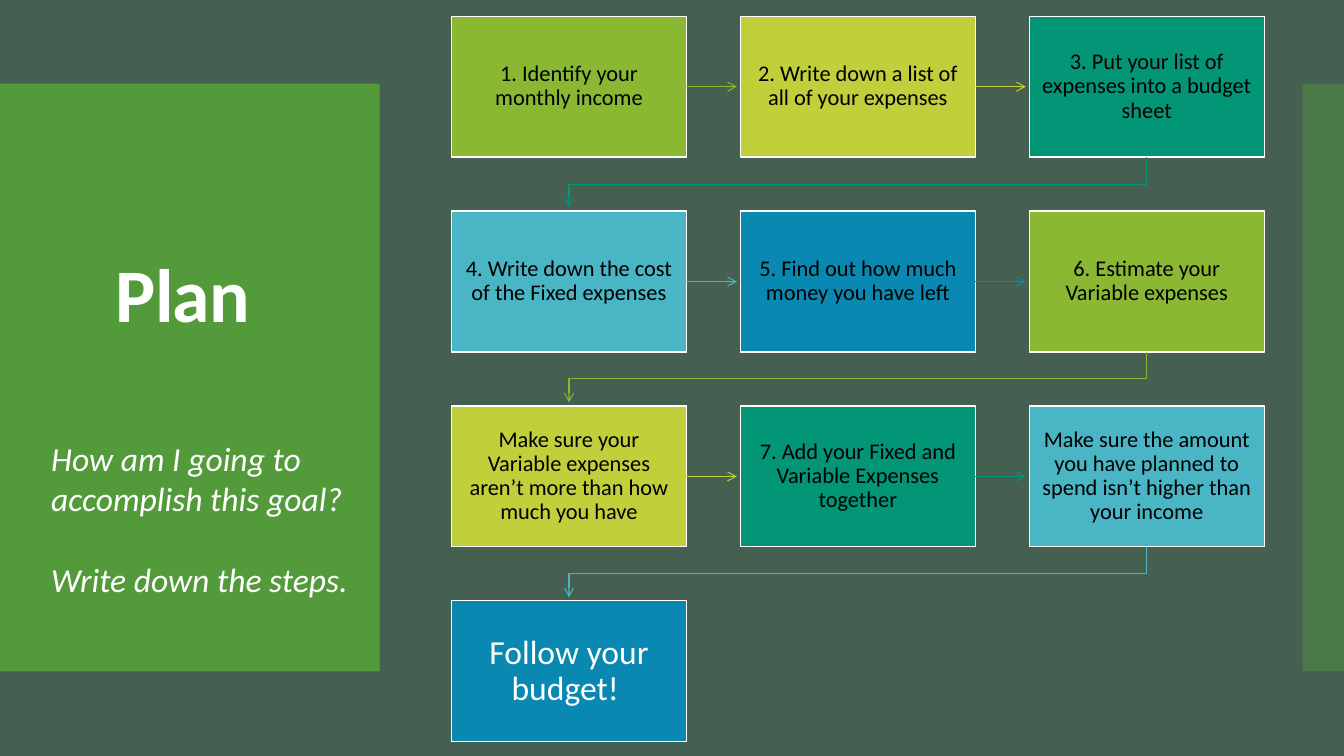
from lxml import etree
from pptx import Presentation
from pptx.dml.color import RGBColor
from pptx.enum import shapes, text
from pptx.oxml import ns
from pptx.util import Cm, Pt

WHITE, BLACK, GREEN = "FFFFFF", "000000", "549E39"
STEP_COLORS = ["8AB833", "C0CF3A", "029676", "4AB5C4", "0989B1"]
STEPS = [
    "1. Identify your monthly income",
    "2. Write down a list of all of your expenses",
    "3. Put your list of expenses into a budget sheet",
    "4. Write down the cost of the Fixed expenses",
    "5. Find out how much money you have left",
    "6. Estimate your Variable expenses",
    "Make sure your Variable expenses aren’t more than how much you have",
    "7. Add your Fixed and Variable Expenses together",
    "Make sure the amount you have planned to spend isn’t higher than your income",
    "Follow your budget! ",
]
COLUMNS = 3
LEFT, TOP = Cm(11.38), Cm(0.41)
WIDTH, HEIGHT = Cm(5.92), Cm(3.55)
PITCH_X, PITCH_Y = Cm(7.28), Cm(4.91)
ARROW = Cm(1.27)


def paint(target, color):
    """Give a fill a solid colour."""
    target.solid()
    target.fore_color.rgb = RGBColor.from_string(color)


def add_child(parent, tag, **attributes):
    """Append a drawing element with the given attributes."""
    return etree.SubElement(parent, ns.qn(tag), **attributes)


def add_rectangle(page, left, top, width, height, color):
    """Draw a plain filled rectangle."""
    box = page.shapes.add_shape(shapes.MSO_SHAPE.RECTANGLE, left, top, width, height)
    box.shadow.inherit = False
    paint(box.fill, color)
    box.line.fill.background()
    return box


def add_panel(page, left, width, opacity):
    """Draw a translucent green side panel."""
    panel = add_rectangle(page, left, Cm(2.11), width, Cm(14.81), GREEN)
    color = panel.fill._xPr.find(ns.qn("a:solidFill"))[0]
    add_child(color, "a:alpha", val=str(opacity * 1000))


def style_text(frame, size, color, align, inset=0.25, bold=False, italic=False, spacing=None):
    """Format all paragraphs and runs of a text frame."""
    frame.word_wrap = True
    frame.margin_left = frame.margin_right = Cm(inset)
    frame.margin_top = frame.margin_bottom = Cm(inset / 2)
    for para in frame.paragraphs:
        para.alignment = align
        para.line_spacing = spacing
        for span in para.runs:
            font = span.font
            font.name, font.size = "Calibri", Pt(size)
            font.bold, font.italic = bold, italic
            font.color.rgb = RGBColor.from_string(color)


def add_title(page):
    """Write the slide title."""
    box = page.shapes.add_textbox(Cm(0.72), Cm(3.12), Cm(8.18), Cm(8.76))
    frame = box.text_frame
    frame.text = "Plan "
    frame.vertical_anchor = text.MSO_ANCHOR.MIDDLE
    style_text(frame, 54, WHITE, text.PP_ALIGN.CENTER, bold=True, spacing=0.9)
    frame.paragraphs[0].runs[0].font._element.set("spc", "-60")


def add_prompt(page):
    """Write the question and the instruction under the title."""
    box = page.shapes.add_textbox(Cm(1.04), Cm(10.9), Cm(8.18), Cm(4.37))
    frame = box.text_frame
    frame.text = "How am I going to accomplish this goal?\nWrite down the steps."
    style_text(frame, 24, WHITE, text.PP_ALIGN.LEFT, italic=True)
    frame.paragraphs[1].space_before = Pt(29)


def add_step(page, index, wording, color, size, ink):
    """Place one step box in the grid."""
    row, column = divmod(index, COLUMNS)
    box = add_rectangle(page, LEFT + column * PITCH_X, TOP + row * PITCH_Y,
                        WIDTH, HEIGHT, color)
    paint(box.line.fill, WHITE)
    box.line.width = Pt(0.85)
    box.text_frame.text = wording
    box.text_frame.vertical_anchor = text.MSO_ANCHOR.MIDDLE
    style_text(box.text_frame, size, ink, text.PP_ALIGN.CENTER,
               inset=size * 0.02, spacing=0.9)
    return box


def style_arrow(arrow, color):
    """Give a line its colour, weight and open arrowhead."""
    paint(arrow.line.fill, color)
    arrow.line.width = Pt(0.75)
    add_child(arrow.line._get_or_add_ln(), "a:tailEnd", type="arrow")


def add_straight_arrow(page, box, color):
    """Point from a box to its right-hand neighbour."""
    right, middle = box.left + box.width, box.top + box.height // 2
    arrow = page.shapes.add_connector(shapes.MSO_CONNECTOR.STRAIGHT,
                                      right, middle, right + ARROW, middle)
    arrow.begin_connect(box, 3)
    style_arrow(arrow, color)
    add_child(arrow._element.spPr, "a:effectLst")


def add_return_arrow(page, box, color):
    """Lead from the end of a row to the start of the next."""
    start, end = box.left + box.width // 2, LEFT + WIDTH // 2
    bottom = box.top + box.height
    bend = bottom + (PITCH_Y - HEIGHT) // 2
    builder = page.shapes.build_freeform(start, bottom)
    builder.add_line_segments([(start, bend), (end, bend), (end, bottom + ARROW)], close=False)
    arrow = builder.convert_to_shape()
    arrow.shadow.inherit = False
    arrow.fill.background()
    style_arrow(arrow, color)


def add_flow(page):
    """Draw all steps and the arrows between them."""
    last = len(STEPS) - 1
    for index, wording in enumerate(STEPS):
        color = STEP_COLORS[index % len(STEP_COLORS)]
        size, ink = (24, WHITE) if index == last else (16, BLACK)
        box = add_step(page, index, wording, color, size, ink)
        if index == last:
            continue
        if index % COLUMNS == COLUMNS - 1:
            add_return_arrow(page, box, color)
        else:
            add_straight_arrow(page, box, color)


def main():
    """Build and save the slide."""
    deck = Presentation()
    deck.slide_width, deck.slide_height = Cm(33.87), Cm(19.05)
    page = deck.slides.add_slide(deck.slide_layouts[6])
    paint(page.background.fill, "455F51")
    add_panel(page, Cm(0), Cm(9.57), 95)
    add_panel(page, Cm(32.82), Cm(1.05), 40)
    add_title(page)
    add_flow(page)
    add_prompt(page)
    deck.save("out.pptx")


if __name__ == "__main__":
    main()
